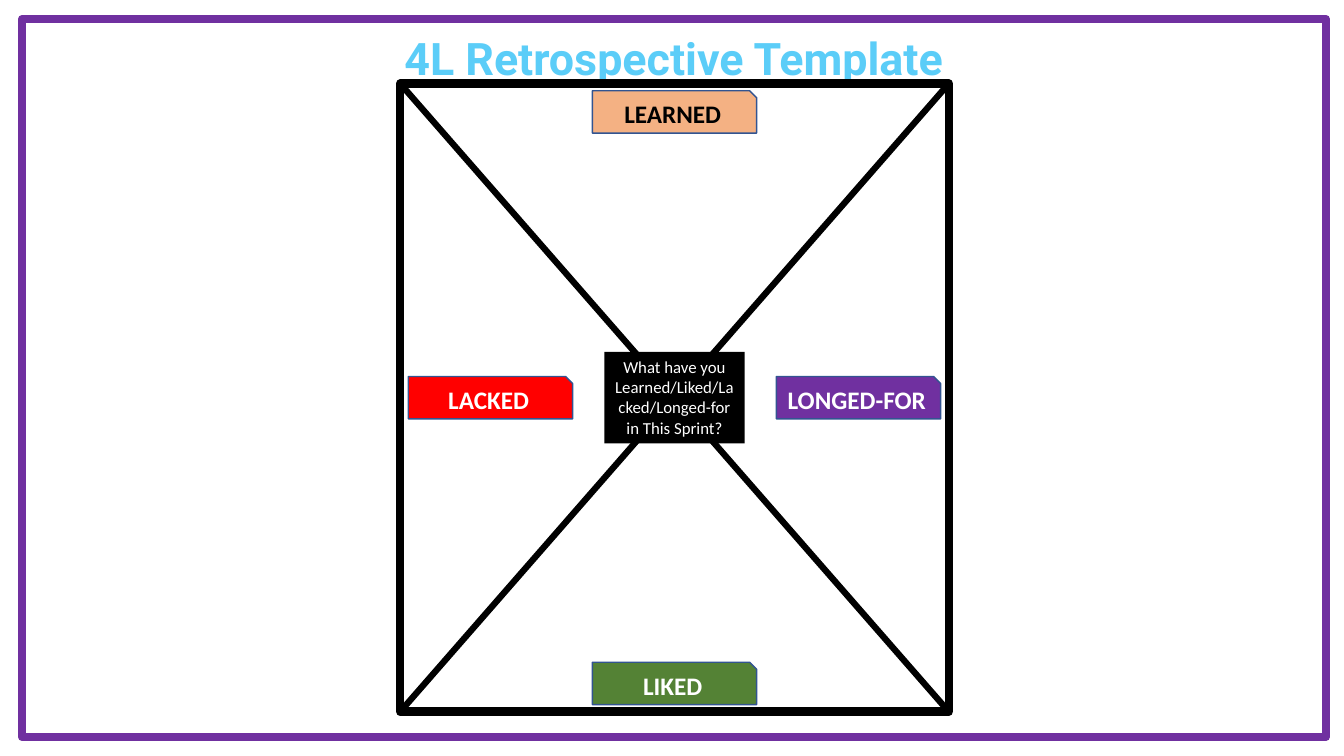
from collections import namedtuple
from dataclasses import dataclass

from lxml import etree
from pptx import Presentation, util as u
from pptx.dml.color import RGBColor
from pptx.enum import shapes, text
from pptx.oxml.ns import qn

Box = namedtuple("Box", "left top width height")
Label = namedtuple("Label", "wording fill ink across down")


@dataclass(frozen=True)
class Theme:
    """Colours, fonts and sizes of the slide."""
    purple: str = "7030A0"
    sky: str = "5BCDF8"
    black: str = "000000"
    white: str = "FFFFFF"
    orange: str = "F4B183"
    green: str = "548235"
    red: str = "FF0000"
    edge: str = "325491"
    heading_font: str = "Roboto"
    body_font: str = "Calibri"
    title_size: float = 32
    label_size: float = 18
    prompt_size: float = 12
    frame_line: float = 6
    diagonal_line: float = 4.5
    label_line: float = 1


THEME = Theme()
SLIDE = Box(0, 0, 13.33, 7.5)
FRAME = Box(0.22, 0.19, 12.93, 7.12)
TITLE = Box(2.25, 0.26, 8.87, 0.64)
BOARD = Box(3.97, 0.83, 5.44, 6.23)
LABEL_SIZE = (1.63, 0.42)
PROMPT_SIZE = (1.39, 0.91)
LABEL_MARGIN = (0.08, 0.07)

LABELS = [
    Label("LEARNED", THEME.orange, THEME.black, 0.5, 0),
    Label("LIKED", THEME.green, THEME.white, 0.5, 1),
    Label("LACKED", THEME.red, THEME.white, 0, 0.5),
    Label("LONGED-FOR", THEME.purple, THEME.white, 1, 0.5),
]


def inches(values):
    """Convert plain numbers to inch lengths."""
    return [u.Inches(value) for value in values]


def place(area, size, across, down, margin=(0, 0)):
    """Return a box of the given size at a share of the free space in an area."""
    width, height = size
    left = area.left + margin[0] + across * (area.width - 2 * margin[0] - width)
    top = area.top + margin[1] + down * (area.height - 2 * margin[1] - height)
    return Box(left, top, width, height)


def write(shape, wording, anchor, **font):
    """Put one centred, formatted paragraph into a shape."""
    frame = shape.text_frame
    frame.word_wrap = True
    frame.vertical_anchor = anchor
    para = frame.paragraphs[0]
    para.alignment = text.PP_ALIGN.CENTER
    span = para.add_run()
    span.text = wording
    span.font.color.rgb = RGBColor.from_string(font.pop("ink"))
    for name, value in font.items():
        setattr(span.font, name, value)


def stroke(shape, colour, width):
    """Give a shape or connector a solid line."""
    shape.line.color.rgb = RGBColor.from_string(colour)
    shape.line.width = u.Pt(width)


def add_block(page, box, kind=shapes.MSO_SHAPE.RECTANGLE, fill=None, line=None):
    """Add a flat shape with an optional fill and an optional line."""
    shape = page.shapes.add_shape(kind, *inches(box))
    shape.shadow.inherit = False
    if fill:
        shape.fill.solid()
        shape.fill.fore_color.rgb = RGBColor.from_string(fill)
    else:
        shape.fill.background()
    if line:
        stroke(shape, *line)
    else:
        shape.line.fill.background()
    return shape


def add_diagonal(page, box, rising):
    """Join two opposite corners of a box."""
    ends = [box.top, box.top + box.height]
    start, end = reversed(ends) if rising else ends
    points = inches((box.left, start, box.left + box.width, end))
    line = page.shapes.add_connector(shapes.MSO_CONNECTOR.STRAIGHT, *points)
    stroke(line, THEME.black, THEME.diagonal_line)
    etree.SubElement(line._element.spPr, qn("a:effectLst"))


def add_title(page, box):
    """Add the slide heading."""
    heading = page.shapes.add_textbox(*inches(box))
    write(heading, "4L Retrospective Template", text.MSO_ANCHOR.TOP, ink=THEME.sky,
          name=THEME.heading_font, size=u.Pt(THEME.title_size), bold=True)


def add_label(page, board, label):
    """Add one snipped label along an edge of the board."""
    box = place(board, LABEL_SIZE, label.across, label.down, LABEL_MARGIN)
    shape = add_block(page, box, shapes.MSO_SHAPE.SNIP_1_RECTANGLE, label.fill,
                      (THEME.edge, THEME.label_line))
    write(shape, label.wording, text.MSO_ANCHOR.MIDDLE, ink=label.ink,
          name=THEME.body_font, size=u.Pt(THEME.label_size), bold=True)


def add_prompt(page, board):
    """Add the question at the centre of the board."""
    shape = add_block(page, place(board, PROMPT_SIZE, 0.5, 0.5), fill=THEME.black)
    write(shape, "What have you Learned/Liked/Lacked/Longed-for in This Sprint?",
          text.MSO_ANCHOR.TOP, ink=THEME.white, name=THEME.body_font,
          size=u.Pt(THEME.prompt_size))


def add_board(page, box):
    """Add the crossed board with its labels and central question."""
    add_diagonal(page, box, rising=False)
    add_block(page, box, line=(THEME.black, THEME.frame_line))
    add_diagonal(page, box, rising=True)
    for label in LABELS:
        add_label(page, box, label)
    add_prompt(page, box)


def main():
    """Build and save the deck."""
    deck = Presentation()
    deck.slide_width, deck.slide_height = inches((SLIDE.width, SLIDE.height))
    page = deck.slides.add_slide(deck.slide_layouts[6])
    add_block(page, FRAME, line=(THEME.purple, THEME.frame_line))
    add_title(page, TITLE)
    add_board(page, BOARD)
    deck.save("out.pptx")


if __name__ == "__main__":
    main()
